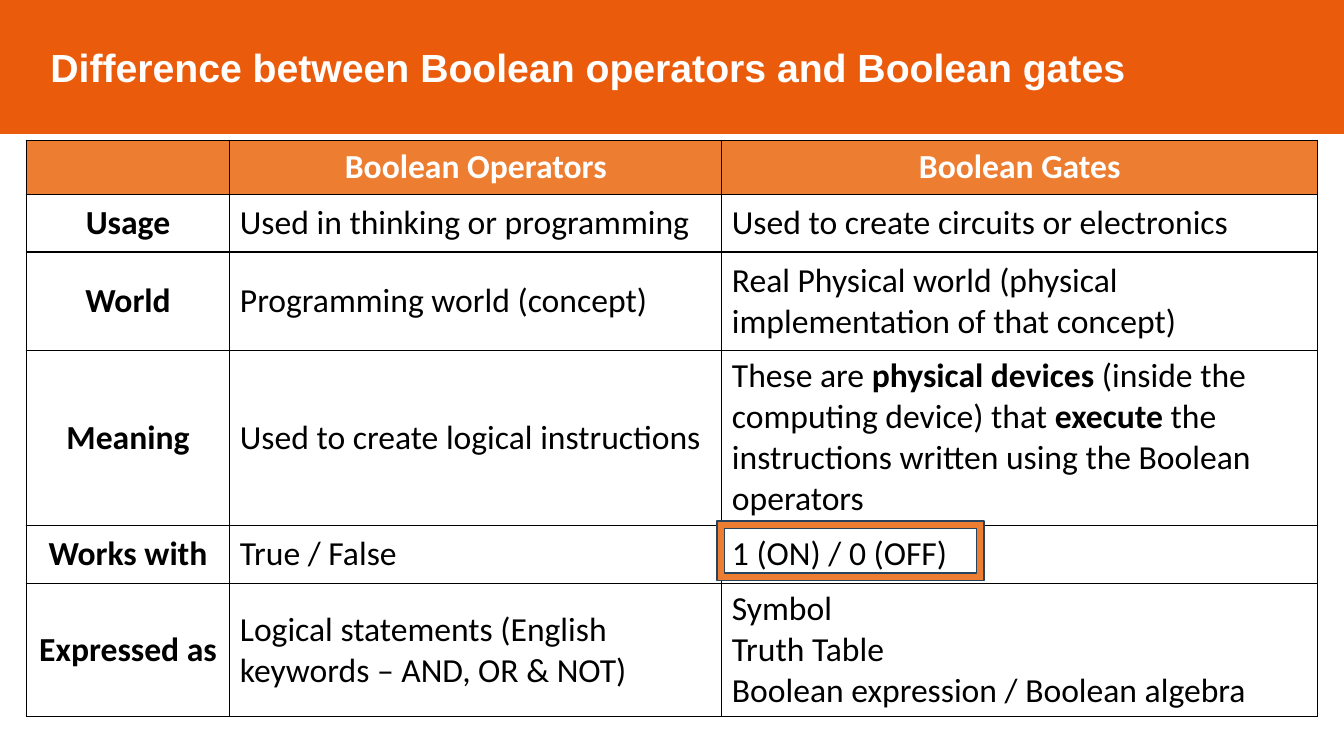
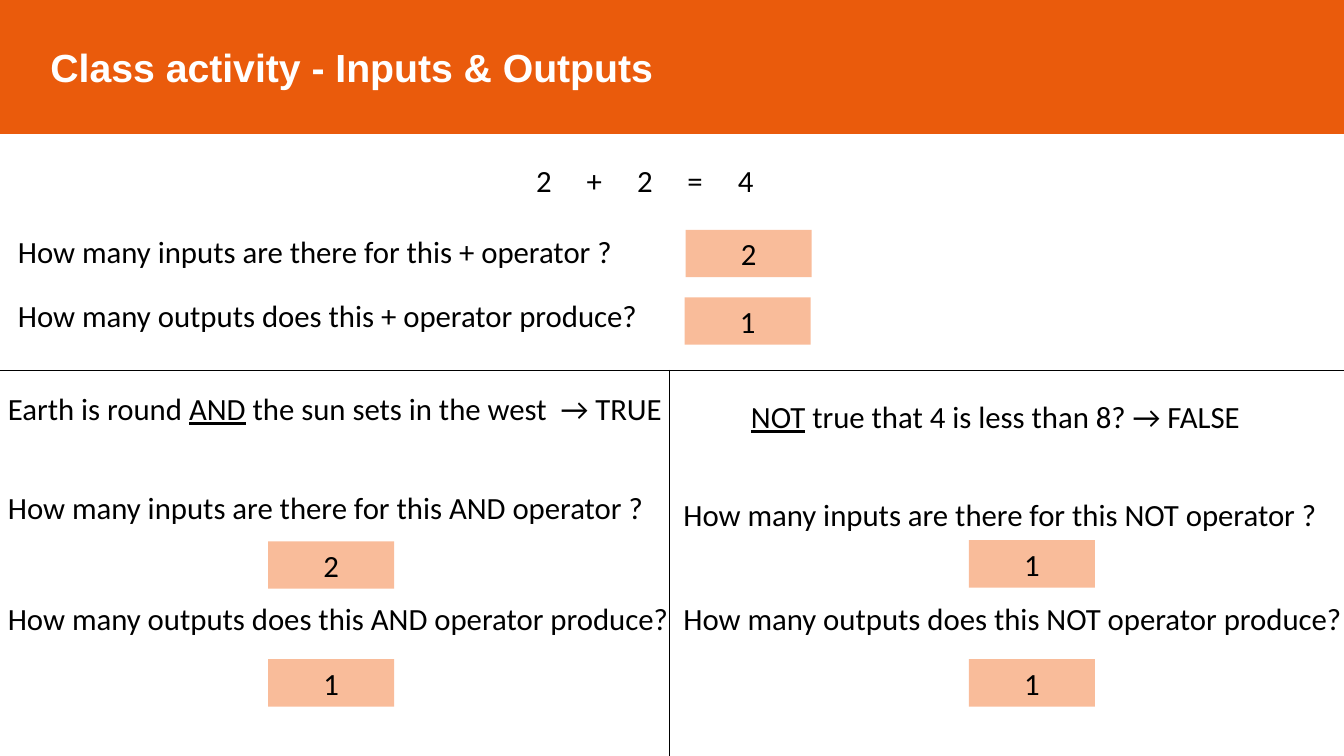
from pptx import Presentation
from pptx.dml.color import RGBColor
from pptx.enum.shapes import MSO_CONNECTOR, MSO_SHAPE
from pptx.enum.text import MSO_ANCHOR, MSO_AUTO_SIZE, PP_ALIGN
from pptx.oxml.ns import qn
from pptx.util import Inches, Pt
from lxml.etree import SubElement

WHITE = RGBColor(0xFF, 0xFF, 0xFF)
BLACK = RGBColor(0x00, 0x00, 0x00)
BAND_ORANGE = RGBColor(0xEA, 0x5B, 0x0C)
HEADER_ORANGE = RGBColor(0xED, 0x7D, 0x31)
ANSWER_PEACH = RGBColor(0xF9, 0xBC, 0x9A)
FRAME_NAVY = RGBColor(0x28, 0x44, 0x5D)

PAGE_WIDTH, PAGE_HEIGHT = 13.33, 7.5
TITLE_FONT, BODY_FONT = "Arial", "Calibri"
TABLE_SIZE, ACTIVITY_SIZE = 24, 22
LINE_HEIGHT = 0.47
ANSWER_WIDTH = 1.25
DIVIDER_X, DIVIDER_Y = 6.64, 3.67

COLUMN_WIDTHS = [2.02, 4.88, 5.91]
ROW_HEIGHTS = [0.54, 0.57, 0.98, 1.73, 0.58, 1.32]
# Asterisks enclose emphasised words.
COMPARISON = [
    ["", "Boolean Operators", "Boolean Gates"],
    ["Usage", "Used in thinking or programming",
     "Used to create circuits or electronics"],
    ["World", "Programming world (concept)",
     "Real Physical world (physical implementation of that concept)"],
    ["Meaning", "Used to create logical instructions",
     "These are *physical devices* (inside the computing device) that "
     "*execute* the instructions written using the Boolean operators"],
    ["Works with", "True / False", "1 (ON) / 0 (OFF)"],
    ["Expressed as", "Logical statements (English keywords – AND, OR & NOT)",
     "Symbol\nTruth Table\nBoolean expression / Boolean algebra"],
]

# Left, top, width, text
QUESTIONS = [
    (0.08, 2.26, 6.16, "How many inputs are there for this + operator ?"),
    (0.08, 2.89, 6.41, "How many outputs does this + operator produce?"),
    (-0.02, 4.8, 6.58, "How many inputs are there for this AND operator ?"),
    (-0.02, 5.9, 6.83, "How many outputs does this AND operator produce?"),
    (6.68, 4.87, 6.56, "How many inputs are there for this NOT operator ?"),
    (6.68, 5.9, 6.77, "How many outputs does this NOT operator produce?"),
]
# Left, top, text
ANSWERS = [
    (6.8, 2.28, "2"), (6.79, 2.95, "1"),
    (2.66, 5.37, "2"), (2.66, 6.54, "1"),
    (9.61, 5.36, "1"), (9.61, 6.54, "1"),
]


def style_font(para, size, color=BLACK, name=BODY_FONT, bold=False):
    font = para.font
    font.name, font.size, font.bold = name, Pt(size), bold
    font.color.rgb = color


def add_spans(para, text, emphasis):
    """Add runs, setting the named font attribute on text between asterisks."""
    for index, part in enumerate(text.split("*")):
        if part:
            span = para.add_run()
            span.text = part
            if index % 2:
                setattr(span.font, emphasis, True)


def add_shape(page, kind, left, top, width, height, fill, line=None):
    shape = page.shapes.add_shape(
        kind, Inches(left), Inches(top), Inches(width), Inches(height))
    shape.shadow.inherit = False
    shape.fill.solid()
    shape.fill.fore_color.rgb = fill
    if line is None:
        shape.line.fill.background()
    else:
        shape.line.color.rgb = line
        shape.line.width = Pt(1)
    return shape


def add_titled_page(deck, title):
    page = deck.slides.add_slide(deck.slide_layouts[6])
    band = add_shape(page, MSO_SHAPE.RECTANGLE, 0, 0, PAGE_WIDTH, 1.32,
                     BAND_ORANGE, BAND_ORANGE)
    frame = band.text_frame
    frame.margin_left = Inches(0.5)
    frame.vertical_anchor = MSO_ANCHOR.MIDDLE
    para = frame.paragraphs[0]
    para.text = title
    para.alignment = PP_ALIGN.LEFT
    style_font(para, 28, WHITE, TITLE_FONT, bold=True)
    return page


def add_text(page, left, top, width, text, height=LINE_HEIGHT, wrap=False):
    box = page.shapes.add_textbox(
        Inches(left), Inches(top), Inches(width), Inches(height))
    box.text_frame.word_wrap = wrap
    box.text_frame.auto_size = MSO_AUTO_SIZE.SHAPE_TO_FIT_TEXT
    para = box.text_frame.paragraphs[0]
    add_spans(para, text, "underline")
    style_font(para, ACTIVITY_SIZE)
    return para


def add_equation(page, left, top, terms, gap):
    """Space the terms evenly with tab stops."""
    para = add_text(page, left, top, 3.33, "\t".join(terms), wrap=True)
    properties = para._p.get_or_add_pPr()
    tabs = SubElement(properties, qn("a:tabLst"))
    properties.insert(0, tabs)
    for index in range(1, len(terms)):
        SubElement(tabs, qn("a:tab"), pos=str(Inches(gap * index)), algn="l")


def add_answer(page, left, top, text):
    answer = add_shape(page, MSO_SHAPE.RECTANGLE, left, top,
                       ANSWER_WIDTH, LINE_HEIGHT, ANSWER_PEACH)
    answer.text_frame.vertical_anchor = MSO_ANCHOR.MIDDLE
    para = answer.text_frame.paragraphs[0]
    para.text = text
    para.alignment = PP_ALIGN.CENTER
    style_font(para, ACTIVITY_SIZE)


def add_divider(page, left, top, right, bottom):
    divider = page.shapes.add_connector(
        MSO_CONNECTOR.STRAIGHT,
        Inches(left), Inches(top), Inches(right), Inches(bottom))
    divider.line.color.rgb = BLACK
    divider.line.width = Pt(0.5)
    SubElement(divider._element.spPr, qn("a:effectLst"))


def add_borders(cell):
    properties = cell._tc.get_or_add_tcPr()
    for side in ("lnL", "lnR", "lnT", "lnB"):
        border = SubElement(properties, qn(f"a:{side}"), w=str(Pt(1)))
        fill = SubElement(border, qn("a:solidFill"))
        SubElement(fill, qn("a:srgbClr"), val=str(BLACK))


def fill_cell(cell, text, is_header, is_label):
    add_borders(cell)
    if is_header:
        cell.fill.solid()
        cell.fill.fore_color.rgb = HEADER_ORANGE
    else:
        cell.fill.background()
    cell.vertical_anchor = MSO_ANCHOR.MIDDLE
    frame = cell.text_frame
    for index, line in enumerate(text.split("\n")):
        para = frame.add_paragraph() if index else frame.paragraphs[0]
        add_spans(para, line, "bold")
        centred = is_header or is_label
        para.alignment = PP_ALIGN.CENTER if centred else PP_ALIGN.LEFT
        style_font(para, TABLE_SIZE, WHITE if is_header else BLACK,
                   bold=centred)


def add_comparison_table(page, left, top):
    table = page.shapes.add_table(
        len(ROW_HEIGHTS), len(COLUMN_WIDTHS), Inches(left), Inches(top),
        Inches(sum(COLUMN_WIDTHS)), Inches(sum(ROW_HEIGHTS))).table
    table.horz_banding = False
    for column, width in zip(table.columns, COLUMN_WIDTHS):
        column.width = Inches(width)
    for row, height in zip(table.rows, ROW_HEIGHTS):
        row.height = Inches(height)
    for r, texts in enumerate(COMPARISON):
        for c, text in enumerate(texts):
            fill_cell(table.cell(r, c), text, r == 0, c == 0)


def build_comparison(deck):
    page = add_titled_page(
        deck, "Difference between Boolean operators and Boolean gates")
    add_comparison_table(page, 0.26, 1.39)
    add_shape(page, MSO_SHAPE.FRAME, 7.11, 5.17, 2.65, 0.59,
              HEADER_ORANGE, FRAME_NAVY)


def build_activity(deck):
    page = add_titled_page(deck, "Class activity - Inputs & Outputs")
    add_equation(page, 5.22, 1.56, ["2", "+", "2", "=", "4"], 0.5)
    add_text(page, -0.02, 3.82, 6.77,
             "Earth is round *AND* the sun sets in the west  → TRUE", wrap=True)
    negation = add_text(page, 7.35, 3.71, 5.59,
                        "*NOT* true that 4 is less than 8? → FALSE",
                        height=0.6, wrap=True)
    negation.line_spacing = 1.5
    for question in QUESTIONS:
        add_text(page, *question)
    for answer in ANSWERS:
        add_answer(page, *answer)
    add_divider(page, 0, DIVIDER_Y, PAGE_WIDTH, DIVIDER_Y)
    add_divider(page, DIVIDER_X, DIVIDER_Y, DIVIDER_X, PAGE_HEIGHT)


def main():
    deck = Presentation()
    deck.slide_width = Inches(PAGE_WIDTH)
    deck.slide_height = Inches(PAGE_HEIGHT)
    build_comparison(deck)
    build_activity(deck)
    deck.save("out.pptx")


if __name__ == "__main__":
    main()
